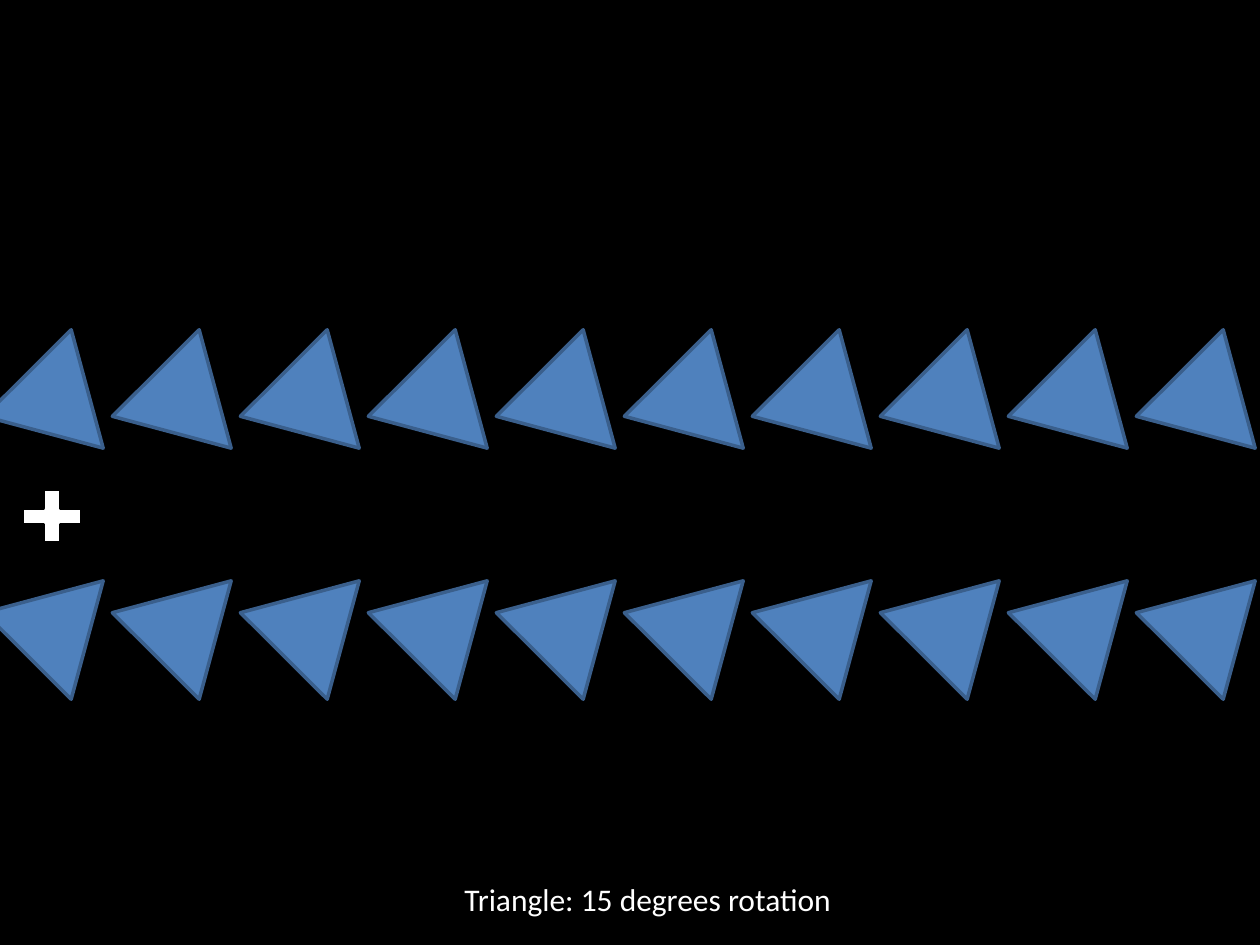
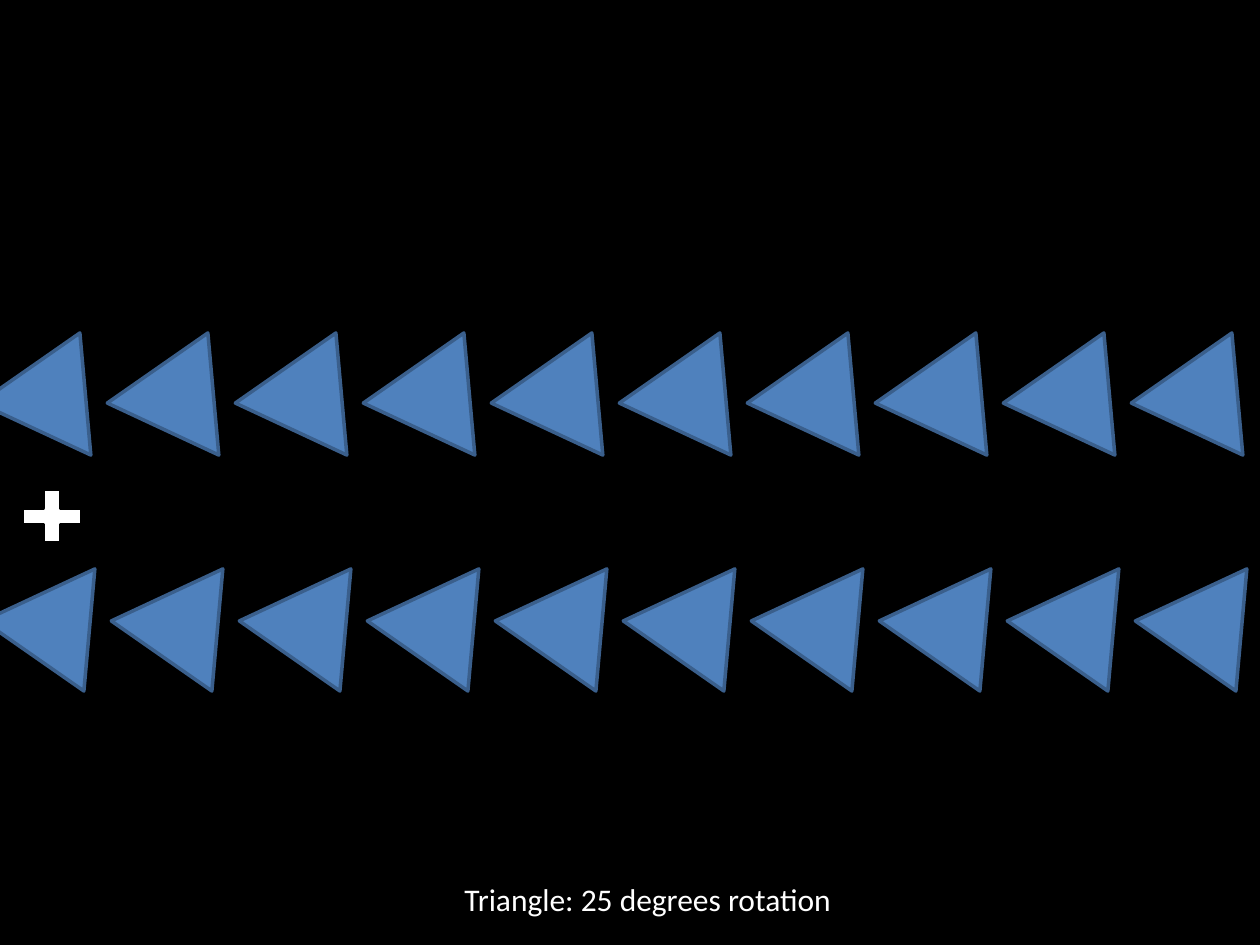
from pptx import Presentation
from pptx.dml.color import RGBColor
from pptx.enum import shapes, text
from pptx import util as u

PX = 914400 / 126  # EMU per px
BLACK, WHITE = "000000", "FFFFFF"
BLUE, DARK_BLUE = "4F81BD", "3A5F8C"
FONT = "Calibri"

TRIANGLES_PER_ROW = 10
PITCH = 128
TRIANGLE_WIDTH, TRIANGLE_HEIGHT = 123, 106
UPPER_LEFT, UPPER_TOP = -4, 328


def paint(color_format, hex_color):
    color_format.rgb = RGBColor.from_string(hex_color)


def add_figure(slide, kind, box, fill, outline, rotation=0):
    figure = slide.shapes.add_shape(kind, *[round(v * PX) for v in box])
    figure.shadow.inherit = False
    figure.rotation = rotation
    figure.fill.solid()
    paint(figure.fill.fore_color, fill)
    paint(figure.line.color, outline)
    figure.line.width = u.Pt(2)


prs = Presentation()
prs.slide_width, prs.slide_height = round(1260 * PX), round(945 * PX)

# Shared black background
backdrop = prs.slide_master.background.fill
backdrop.solid()
paint(backdrop.fore_color, BLACK)

# Rotation angle, then left and top of the lower row
for angle, lower_left, lower_top in [(15, -4, 595), (25, 0, 590)]:
    slide = prs.slides.add_slide(prs.slide_layouts[6])

    # Fixation cross
    add_figure(slide, shapes.MSO_SHAPE.MATH_PLUS, (11, 480, 82, 73), WHITE, BLACK)

    # Upper row, and lower row mirrored top to bottom
    rows = [(UPPER_LEFT, UPPER_TOP, angle), (lower_left, lower_top, 180 - angle)]
    for left, top, rotation in rows:
        for column in range(TRIANGLES_PER_ROW):
            box = (left + column * PITCH, top, TRIANGLE_WIDTH, TRIANGLE_HEIGHT)
            add_figure(slide, shapes.MSO_SHAPE.ISOSCELES_TRIANGLE, box,
                       BLUE, DARK_BLUE, rotation)

    # Caption
    caption = slide.shapes.add_textbox(*[round(v * PX) for v in (452, 874, 399, 50)])
    caption.text_frame.word_wrap = False
    caption.text_frame.auto_size = text.MSO_AUTO_SIZE.SHAPE_TO_FIT_TEXT
    wording = caption.text_frame.paragraphs[0].add_run()
    wording.text = f"Triangle: {angle} degrees rotation"
    wording.font.name, wording.font.size = FONT, u.Pt(18)
    paint(wording.font.color, WHITE)

prs.save("out.pptx")
